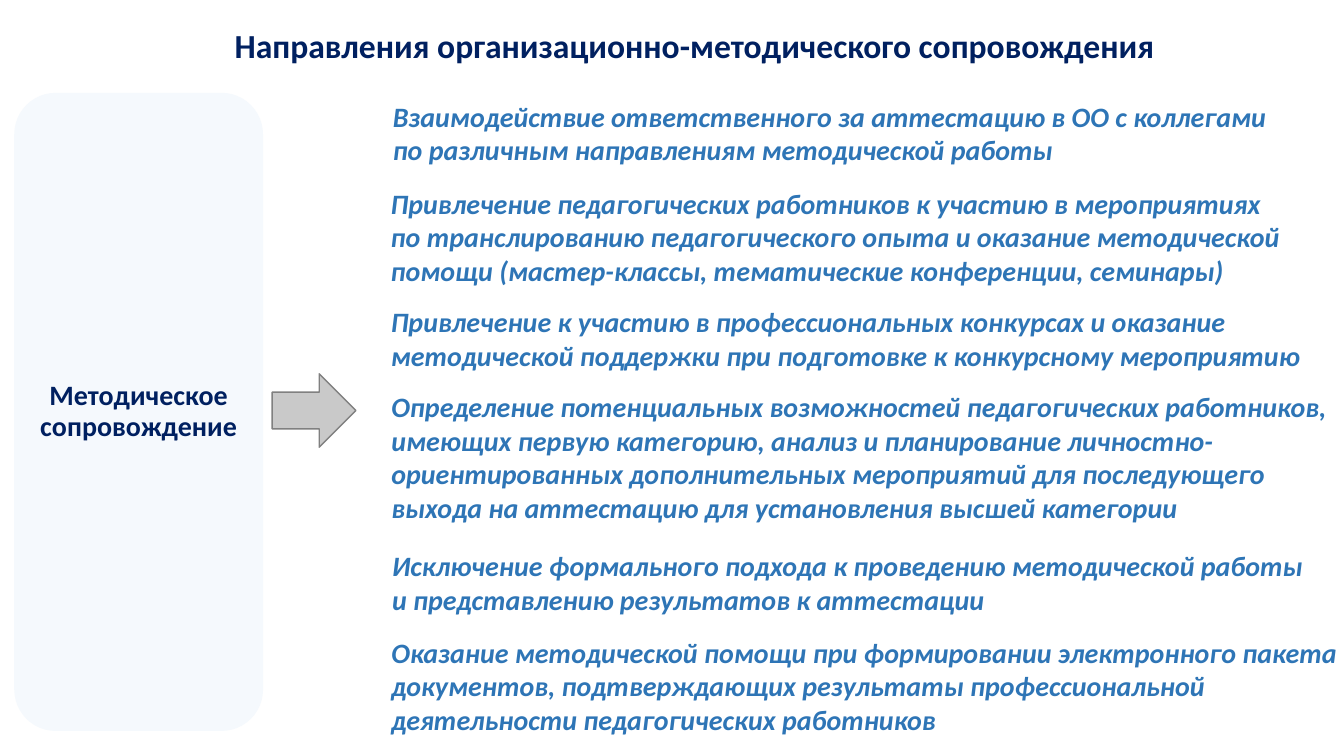
from dataclasses import dataclass

from pptx import Presentation
from pptx.dml.color import RGBColor
from pptx.enum.shapes import MSO_SHAPE
from pptx.enum.text import MSO_ANCHOR, MSO_AUTO_SIZE, PP_ALIGN
from pptx.shapes.autoshape import Shape
from pptx.slide import Slide
from pptx.util import Cm, Pt

NAVY = RGBColor(0x00, 0x20, 0x60)
BLUE = RGBColor(0x2E, 0x75, 0xB6)
PALE_BLUE = RGBColor(0xF5, 0xF9, 0xFD)
SILVER = RGBColor(0xC9, 0xC9, 0xC9)
GREY = RGBColor(0x80, 0x80, 0x80)

FONT = "Calibri"
DIRECTION_WIDTH = 25.0


@dataclass(frozen=True)
class Frame:
    left: float
    top: float
    width: float
    height: float


@dataclass(frozen=True)
class TextStyle:
    size: int
    color: RGBColor
    italic: bool
    align: PP_ALIGN
    line_spacing: float


@dataclass(frozen=True)
class Direction:
    left: float
    top: float
    height: float
    lines: tuple[str, ...]


TITLE_STYLE = TextStyle(24, NAVY, False, PP_ALIGN.CENTER, 0.9)
PANEL_STYLE = TextStyle(20, NAVY, False, PP_ALIGN.CENTER, 0.9)
DIRECTION_STYLE = TextStyle(20, BLUE, True, PP_ALIGN.LEFT, 1.0)

DIRECTIONS = (
    Direction(9.53, 2.13, 2.44, (
        "Взаимодействие ответственного за аттестацию в ОО с коллегами",
        "по различным направлениям методической работы",
    )),
    Direction(9.47, 4.65, 2.62, (
        "Привлечение педагогических работников к участию в мероприятиях",
        "по транслированию педагогического опыта и оказание методической помощи "
        "(мастер-классы, тематические конференции, семинары)",
    )),
    Direction(9.5, 7.49, 2.06, (
        "Привлечение к участию в профессиональных конкурсах и оказание "
        "методической поддержки при подготовке к конкурсному мероприятию",
    )),
    Direction(9.45, 9.86, 3.3, (
        "Определение потенциальных возможностей педагогических работников, "
        "имеющих первую категорию, анализ и планирование "
        "личностно-ориентированных дополнительных мероприятий для последующего "
        "выхода на аттестацию для установления высшей категории",
    )),
    Direction(9.47, 13.03, 3.3, (
        "Исключение формального подхода к проведению методической работы",
        "и представлению результатов к аттестации",
    )),
    Direction(9.47, 15.82, 2.92, (
        "Оказание методической помощи при формировании электронного пакета "
        "документов, подтверждающих результаты профессиональной деятельности "
        "педагогических работников",
    )),
)


def write_lines(box: Shape, lines: tuple[str, ...], style: TextStyle) -> None:
    frame = box.text_frame
    frame.word_wrap = True
    frame.auto_size = MSO_AUTO_SIZE.NONE
    frame.vertical_anchor = MSO_ANCHOR.MIDDLE
    for index, line in enumerate(lines):
        para = frame.add_paragraph() if index else frame.paragraphs[0]
        para.alignment = style.align
        para.line_spacing = style.line_spacing
        span = para.add_run()
        span.text = line
        span.font.name = FONT
        span.font.size = Pt(style.size)
        span.font.bold = True
        span.font.italic = style.italic
        span.font.color.rgb = style.color


def add_box(page: Slide, kind: MSO_SHAPE, frame: Frame,
            fill: RGBColor | None = None, line: RGBColor | None = None) -> Shape:
    box = page.shapes.add_shape(kind, Cm(frame.left), Cm(frame.top),
                                Cm(frame.width), Cm(frame.height))
    box.shadow.inherit = False
    if fill is None:
        box.fill.background()
    else:
        box.fill.solid()
        box.fill.fore_color.rgb = fill
    if line is None:
        box.line.fill.background()
    else:
        box.line.color.rgb = line
        box.line.width = Pt(1)
    return box


def set_title(page: Slide, text: str, frame: Frame) -> None:
    title = page.shapes.title
    title.left, title.top = Cm(frame.left), Cm(frame.top)
    title.width, title.height = Cm(frame.width), Cm(frame.height)
    write_lines(title, (text,), TITLE_STYLE)


def main() -> None:
    deck = Presentation()
    deck.slide_width, deck.slide_height = Cm(33.87), Cm(19.05)
    page = deck.slides.add_slide(deck.slide_layouts[5])

    set_title(page, "Направления организационно-методического сопровождения",
              Frame(2.29, 0.3, 30.43, 1.8))

    panel = add_box(page, MSO_SHAPE.ROUNDED_RECTANGLE,
                    Frame(0.36, 2.34, 6.27, 16.08), PALE_BLUE)
    write_lines(panel, ("Методическое сопровождение",), PANEL_STYLE)

    for direction in DIRECTIONS:
        frame = Frame(direction.left, direction.top, DIRECTION_WIDTH, direction.height)
        box = add_box(page, MSO_SHAPE.ROUNDED_RECTANGLE, frame)
        write_lines(box, direction.lines, DIRECTION_STYLE)

    add_box(page, MSO_SHAPE.RIGHT_ARROW, Frame(6.86, 9.42, 2.11, 1.85), SILVER, GREY)

    deck.save("out.pptx")


if __name__ == "__main__":
    main()
